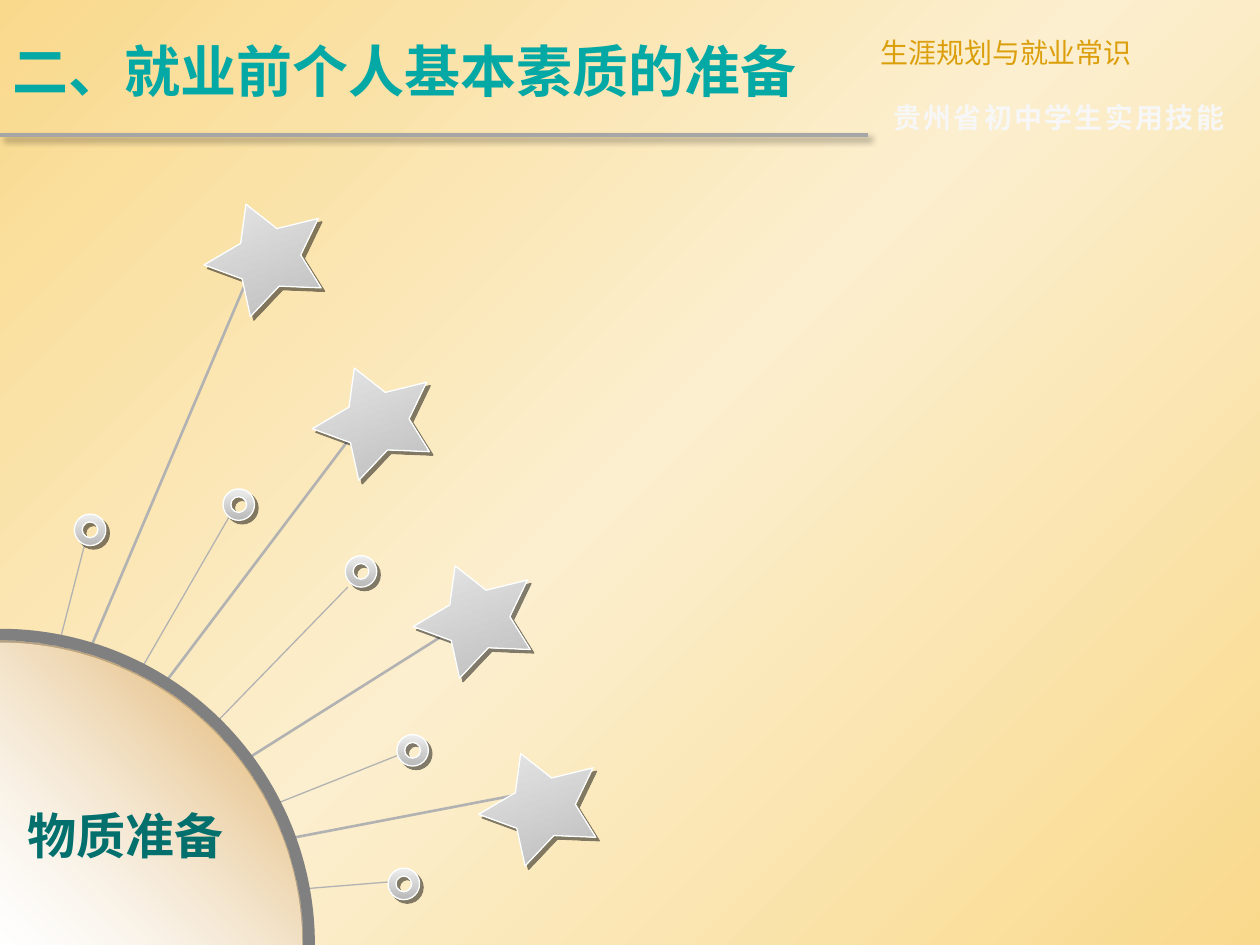
import copy
import math
from collections import namedtuple

import pptx
import pptx.dml.color
import pptx.enum.shapes
import pptx.enum.text
import pptx.oxml.ns
import pptx.util
from lxml import etree

Inches, Pt = pptx.util.Inches, pptx.util.Pt
RGB = pptx.dml.color.RGBColor.from_string
SHAPE = pptx.enum.shapes.MSO_SHAPE
ALIGN = pptx.enum.text.PP_ALIGN
ANCHOR = pptx.enum.text.MSO_ANCHOR
AUTO = pptx.enum.text.MSO_AUTO_SIZE
qn = pptx.oxml.ns.qn

Box = namedtuple("Box", "x y w h")
Shadow = namedtuple("Shadow", "color alpha blur dist")


class Theme:
    font = "Noto Sans CJK SC"
    title, course, series, hub_text = "04A8A4", "DC9F0C", "F7F7F7", "03706E"
    title_size, course_size, series_size, hub_size = 32, 16, 16, 28
    background = [(0, "F9D98C", 100), (50, "FCEFCF", 100), (100, "F9D98C", 100)]
    silver = [(0, "EEEEEE", 100), (100, "B8B8B8", 100)]
    gold = [(0, "F0E1C6", 0), (100, "DDA44F", 100)]
    rule, ray, outline, rim, white = "A6A6A6", "B2B2B2", "FEFFFF", "808080", "FFFFFF"
    rule_shadow = Shadow("000000", 40, 4, 3)
    hard_shadow = Shadow("080808", 50, 0, 2.8)


def add_color(parent, color, alpha):
    c = etree.SubElement(parent, qn("a:srgbClr"), val=color)
    if alpha < 100:
        etree.SubElement(c, qn("a:alpha"), val=str(alpha * 1000))


def set_gradient(fill, element, stops, angle):
    """Angle is counted clockwise, in degrees."""
    fill.gradient()
    fill.gradient_angle = 360 - angle
    gs_list = next(element.iter(qn("a:gsLst")))
    for gs in list(gs_list):
        gs_list.remove(gs)
    for position, color, alpha in stops:
        gs = etree.SubElement(gs_list, qn("a:gs"), pos=str(position * 1000))
        add_color(gs, color, alpha)


def set_shadow(s, shadow=None):
    """Call after fill and line, so that the effects come last."""
    sp_pr = s._element.spPr
    for old in sp_pr.findall(qn("a:effectLst")):
        sp_pr.remove(old)
    effects = etree.SubElement(sp_pr, qn("a:effectLst"))
    if shadow:
        outer = etree.SubElement(
            effects, qn("a:outerShdw"), blurRad=str(Pt(shadow.blur)),
            dist=str(Pt(shadow.dist)), dir="2700000", algn="tl", rotWithShape="0")
        add_color(outer, shadow.color, shadow.alpha)


def add_line(slide, x1, y1, x2, y2, color, width, shadow=None):
    line = slide.shapes.add_connector(
        pptx.enum.shapes.MSO_CONNECTOR.STRAIGHT,
        Inches(x1), Inches(y1), Inches(x2), Inches(y2))
    line.line.color.rgb = RGB(color)
    line.line.width = Pt(width)
    set_shadow(line, shadow)


def write(tf, text, size, color, bold=False, spacing=0, align=ALIGN.LEFT):
    tf.word_wrap = True
    p = tf.paragraphs[0]
    p.alignment = align
    r = p.add_run()
    r.text = text
    r.font.name, r.font.size, r.font.bold = Theme.font, Pt(size), bold
    r.font.color.rgb = RGB(color)
    r_pr = r.font._element
    etree.SubElement(r_pr, qn("a:ea"), typeface=Theme.font)
    if spacing:
        r_pr.set("spc", str(round(spacing * 100)))
    return p


def add_text(slide, box, *args, **kwargs):
    s = slide.shapes.add_textbox(*map(Inches, box))
    return write(s.text_frame, *args, **kwargs)


def add_header(slide, box, title_width):
    # Title and the rule below it
    title = slide.shapes.title
    title.left, title.top = Inches(box.x), Inches(box.y + 0.05)
    title.width, title.height = Inches(title_width), Inches(box.h - 0.05)
    tf = title.text_frame
    tf.auto_size, tf.vertical_anchor = AUTO.NONE, ANCHOR.MIDDLE
    write(tf, "二、就业前个人基本素质的准备", Theme.title_size, Theme.title, bold=True)
    bottom, right = box.y + box.h, box.x + title_width
    add_line(slide, box.x, bottom, right, bottom, Theme.rule, 2.25, Theme.rule_shadow)

    # Course and series names
    side_width = box.w - title_width
    add_text(slide, Box(right, box.y + 0.23, side_width, 0.37),
             "生涯规划与就业常识", Theme.course_size, Theme.course, align=ALIGN.JUSTIFY)
    add_text(slide, Box(right + 0.1, box.y + 0.75, side_width, 0.37),
             "贵州省初中学生实用技能", Theme.series_size, Theme.series, bold=True, spacing=1.4)


def add_ornament(slide, kind, box, rotation=0):
    s = slide.shapes.add_shape(kind, *map(Inches, box))
    s.adjustments[0] = 0.256 if kind == SHAPE.STAR_5_POINT else 0.25
    s.rotation = rotation
    set_gradient(s.fill, s._element, Theme.silver, 90)
    s.line.color.rgb = RGB(Theme.outline)
    s.line.width = Pt(0.75)
    set_shadow(s, Theme.hard_shadow)


def add_fan(slide, box):
    # Ornament left, top; ray start x, y; ray end x, y, all from the box corner
    rings = [
        (1.77, 2.38, 1.82, 2.60, 0, 5.75),
        (3.15, 4.33, 3.17, 4.49, 0, 5.75),
        (2.74, 2.91, 2.76, 3.16, 0, 6.00),
        (0.59, 2.58, 0.67, 2.83, 0.08, 5.12),
        (3.08, 5.39, 3.08, 5.50, 0, 5.75),
    ]
    stars = [
        (1.62, 0.09, 2.05, 0.51, 0.01, 5.31),
        (2.48, 1.39, 2.79, 1.96, 0.26, 5.31),
        (3.28, 2.96, 3.49, 3.56, 0.38, 5.52),
        (3.80, 4.45, 4.46, 4.74, 0.23, 5.55),
    ]
    groups = [
        (rings, SHAPE.DONUT, 0.25, 0.25, 0, 0.75),
        (stars, SHAPE.STAR_5_POINT, 0.98, 0.84, 337.9, 1.5),
    ]
    for items, kind, w, h, rotation, weight in groups:
        for left, top, x1, y1, x2, y2 in items:
            add_line(slide, box.x + x1, box.y + y1, box.x + x2, box.y + y2,
                     Theme.ray, weight)
            add_ornament(slide, kind, Box(box.x + left, box.y + top, w, h), rotation)


def add_quarter(slide, box, rx, ry):
    """Quarter disc around the lower left corner of the box."""
    steps, cx, cy = 60, box.x, box.y + box.h
    angles = [math.pi / 2 * i / steps for i in range(steps + 1)]
    arc = [(Inches(cx + rx * math.sin(a)), Inches(cy - ry * math.cos(a))) for a in angles]
    builder = slide.shapes.build_freeform(Inches(cx), Inches(cy))
    builder.add_line_segments(arc, close=True)
    s = builder.convert_to_shape()
    s.line.fill.background()
    s.shadow.inherit = False
    return s


def add_hub(slide, box):
    # Grey rim, white disc, gold glow
    for radius_x, radius_y, color in [(2.5, 2.51, Theme.rim), (2.4, 2.4, Theme.white)]:
        s = add_quarter(slide, box, radius_x, radius_y)
        s.fill.solid()
        s.fill.fore_color.rgb = RGB(color)
    glow = add_quarter(slide, box, 2.4, 2.42)
    set_gradient(glow.fill, glow._element, Theme.gold, 315)

    # Topic
    add_text(slide, Box(box.x + 0.12, box.y + 1.35, 1.8, 0.57),
             "物质准备", Theme.hub_size, Theme.hub_text, bold=True)


def main():
    prs = pptx.Presentation()
    prs.slide_width, prs.slide_height = Inches(10), Inches(7.5)
    slide = prs.slides.add_slide(prs.slide_layouts[5])
    set_gradient(slide.background.fill, slide._element, Theme.background, 45)
    add_header(slide, Box(0, 0, 10, 1.07), 6.89)
    add_fan(slide, Box(0, 1.5, 5, 6))
    add_hub(slide, Box(0, 4.99, 2.5, 2.51))
    prs.save("out.pptx")


if __name__ == "__main__":
    main()
